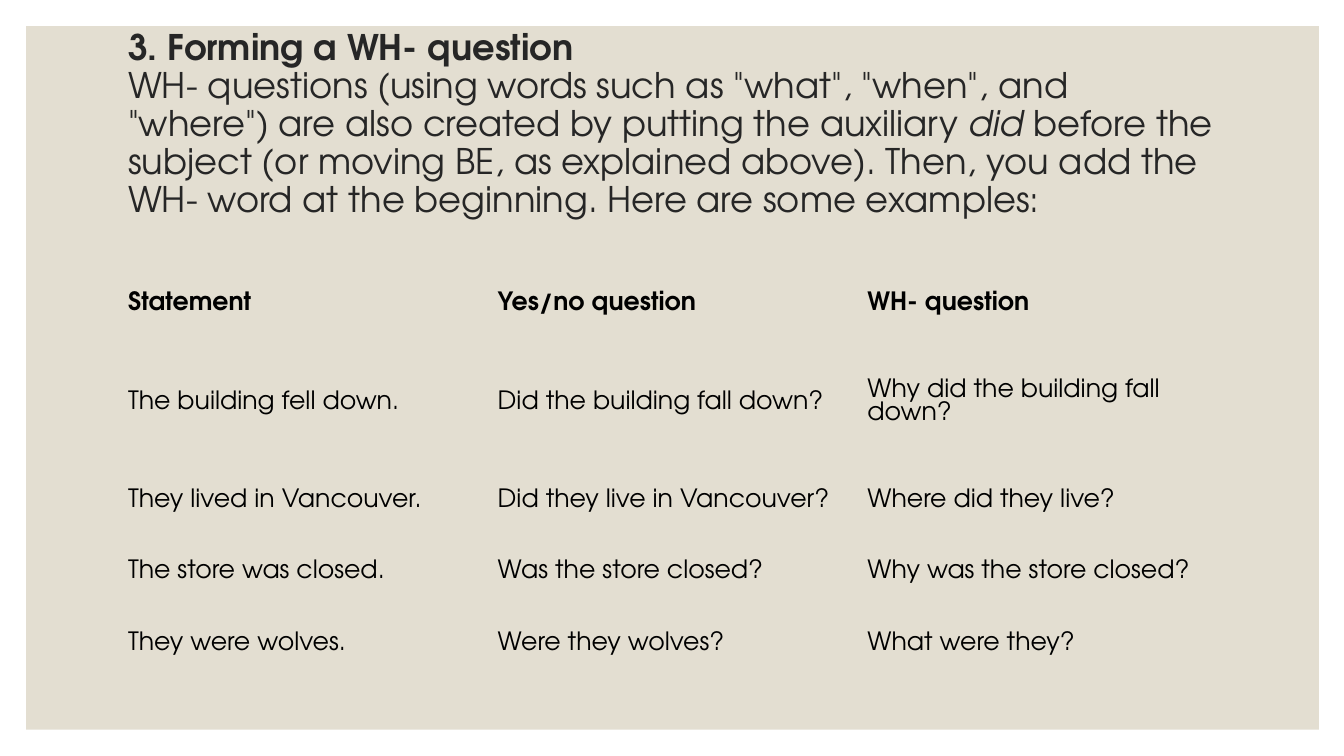
from pptx import Presentation
from pptx.dml.color import RGBColor
from pptx.enum.shapes import MSO_SHAPE as Shape
from pptx.enum.text import MSO_ANCHOR as Anchor, MSO_AUTO_SIZE as AutoSize, PP_ALIGN as Align
from pptx.oxml.ns import qn
from pptx.util import Inches, Pt

FONT = "TeX Gyre Adventor"
NO_STYLE_NO_GRID = "{2D5ABB26-0587-4C30-8999-92F81FD0307C}"
TITLE_RUNS = [
    ("3. Forming a WH- question\v", True, False),
    ('WH- questions (using words such as "what", "when", and "where") are also '
     "created by putting the auxiliary ", False, False),
    ("did", False, True),
    (" before the subject (or moving BE, as explained above). Then, you add the "
     "WH- word at the beginning. Here are some examples:", False, False),
]
EXAMPLES = [
    ("Statement", "Yes/no question", "WH- question"),
    ("The building fell down.", "Did the building fall down?", "Why did the building fall down?"),
    ("They lived in Vancouver.", "Did they live in Vancouver?", "Where did they live?"),
    ("The store was closed.", "Was the store closed?", "Why was the store closed?"),
    ("They were wolves.", "Were they wolves?", "What were they?"),
]
ROW_HEIGHTS = [0.71, 1.24, 0.71, 0.71, 0.71]


def color(value):
    return RGBColor.from_string(value)


def format_font(font, size, value, bold=False, italic=False):
    font.name, font.size = FONT, Pt(size)
    font.bold, font.italic = bold, italic
    font.color.rgb = color(value)


def add_panel(slide, left, top, width, height):
    """Place the beige panel behind everything else on the slide."""
    panel = slide.shapes.add_shape(
        Shape.RECTANGLE, Inches(left), Inches(top), Inches(width), Inches(height))
    panel.shadow.inherit = False
    panel.fill.solid()
    panel.fill.fore_color.rgb = color("E3DED1")
    panel.line.fill.background()
    slide.shapes._spTree.insert(2, panel._element)


def fill_title(slide, left, top, width, height):
    title = slide.shapes.title
    title.left, title.top = Inches(left), Inches(top)
    title.width, title.height = Inches(width), Inches(height)
    frame = title.text_frame
    frame.word_wrap = True
    frame.auto_size = AutoSize.NONE
    frame.vertical_anchor = Anchor.MIDDLE
    frame.margin_bottom = Inches(0.47)
    paragraph = frame.paragraphs[0]
    paragraph.alignment = Align.LEFT
    paragraph.line_spacing = 0.9
    for text, bold, italic in TITLE_RUNS:
        run = paragraph.add_run()
        run.text = text.rstrip("\v")
        format_font(run.font, 25.2, "262626", bold, italic)
        if text.endswith("\v"):
            paragraph.add_line_break()


def add_examples(slide, left, top, width):
    columns = len(EXAMPLES[0])
    table = slide.shapes.add_table(
        len(EXAMPLES), columns, Inches(left), Inches(top),
        Inches(width), Inches(sum(ROW_HEIGHTS))).table
    table.first_row = table.horz_banding = False
    table._tbl.tblPr.find(qn("a:tableStyleId")).text = NO_STYLE_NO_GRID
    for column in table.columns:
        column.width = Inches(width / columns)
    for row_index, texts in enumerate(EXAMPLES):
        table.rows[row_index].height = Inches(ROW_HEIGHTS[row_index])
        for column_index, text in enumerate(texts):
            cell = table.cell(row_index, column_index)
            cell.fill.background()
            cell.vertical_anchor = Anchor.MIDDLE
            paragraph = cell.text_frame.paragraphs[0]
            paragraph.text = text
            paragraph.line_spacing = 1.0
            format_font(paragraph.runs[0].font, 18, "000000", bold=row_index == 0)


def main():
    presentation = Presentation()
    presentation.slide_width, presentation.slide_height = Inches(13.33), Inches(7.5)
    slide = presentation.slides.add_slide(presentation.slide_layouts[5])
    add_panel(slide, 0.26, 0.26, 12.82, 6.98)
    fill_title(slide, 1.17, 0.7, 11, 1.5)
    add_examples(slide, 1.17, 2.66, 11)
    presentation.save("out.pptx")


if __name__ == "__main__":
    main()
